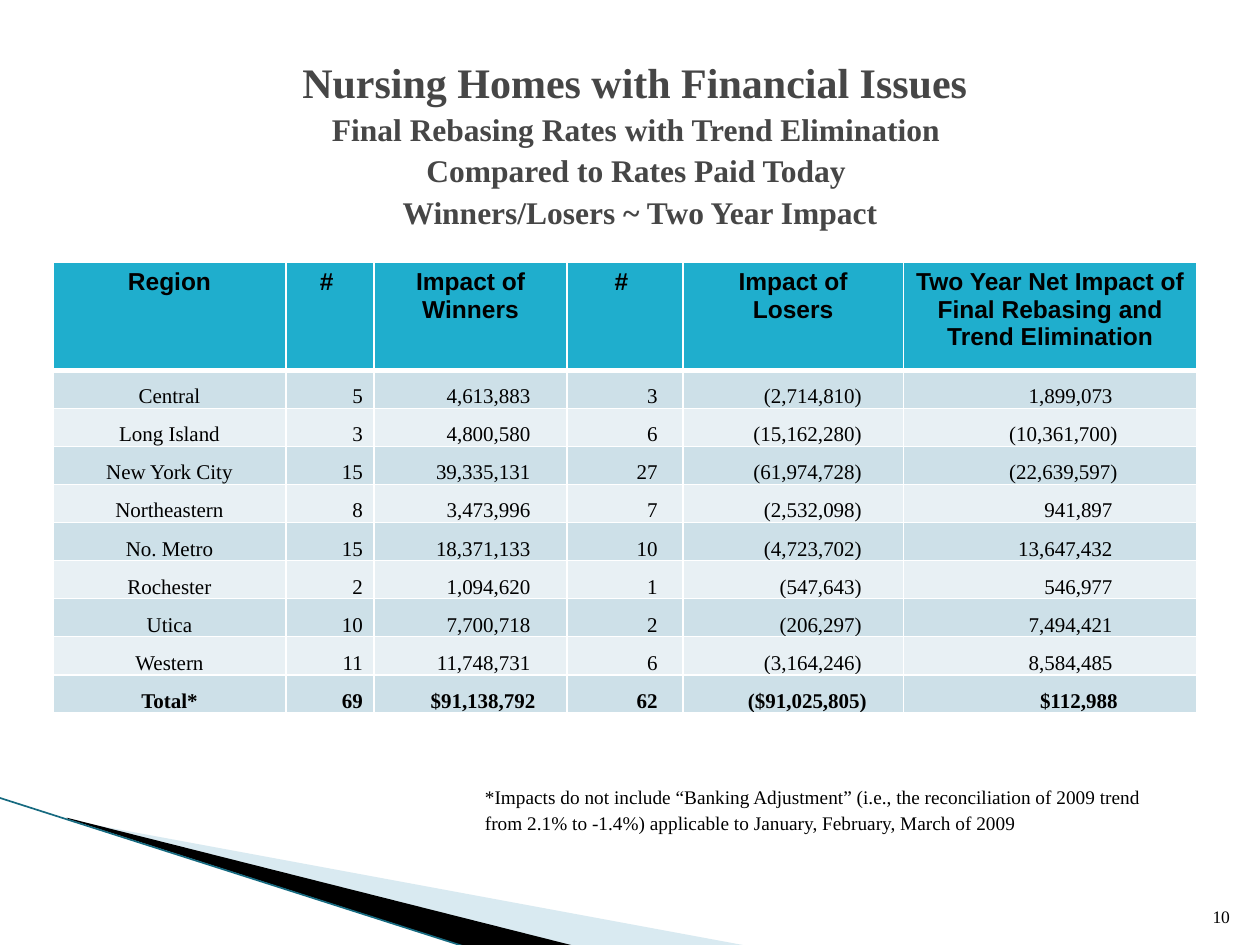
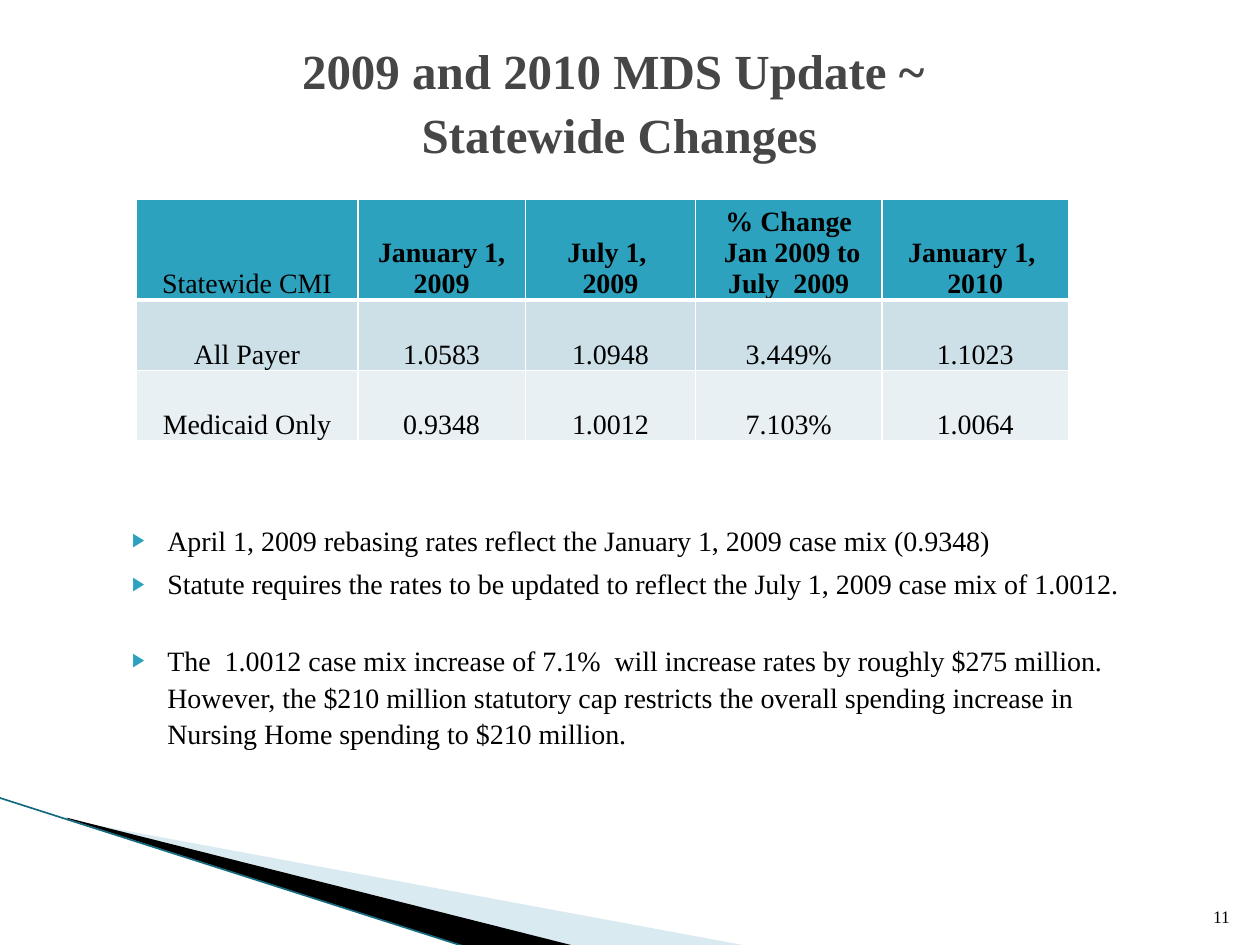
from lxml import etree
from pptx import Presentation
from pptx.dml.color import RGBColor
from pptx.enum.shapes import MSO_CONNECTOR
from pptx.enum.text import MSO_ANCHOR, PP_ALIGN
from pptx.oxml.ns import qn
from pptx.util import Inches, Pt

BLACK = RGBColor(0x00, 0x00, 0x00)
WHITE = RGBColor(0xFF, 0xFF, 0xFF)
TITLE_GREY = RGBColor(0x46, 0x46, 0x46)
TEAL = RGBColor(0x2D, 0xA2, 0xBF)
BRIGHT_TEAL = RGBColor(0x1F, 0xAE, 0xCD)
DARK_TEAL = RGBColor(0x16, 0x6A, 0x80)
PALE_BLUE = RGBColor(0xA0, 0xCB, 0xDC)
BANDS = (RGBColor(0xCD, 0xE0, 0xE8), RGBColor(0xE8, 0xF0, 0xF4))

SERIF = "Times New Roman"
SANS = "Arial"
LINE_SPACING = 1.09


class Deck:
    """Holds the shared style and the slide being built."""

    def __init__(self):
        self.prs = Presentation()
        self.prs.slide_width, self.prs.slide_height = Inches(10), Inches(7.5)
        self.s = None

    def new_slide(self, number):
        self.s = self.prs.slides.add_slide(self.prs.slide_layouts[6])
        # Corner wedges and the line beside them
        self.wedge([(0.55, 6.51), (5.95, 7.51), (4.56, 7.51), (0.55, 6.5)], PALE_BLUE, 40)
        self.wedge([(0.53, 6.49), (4.57, 7.51), (3.72, 7.52), (0.54, 6.5)], BLACK)
        self.line((-0.01, 6.33), (3.71, 7.52), DARK_TEAL, 0.95)
        # Slide number
        self.text((9.46, 7.01, 0.4, 0.4), [(str(number), 10)],
                  align=PP_ALIGN.RIGHT, anchor=MSO_ANCHOR.BOTTOM)

    def wedge(self, points, color, alpha=None):
        points = [(Inches(x), Inches(y)) for x, y in points]
        builder = self.s.shapes.build_freeform(*points[0], scale=1.0)
        builder.add_line_segments(points[1:], close=True)
        sp = builder.convert_to_shape()
        sp.shadow.inherit = False
        sp.fill.solid()
        sp.fill.fore_color.rgb = color
        sp.line.fill.background()
        if alpha is not None:
            clr = sp.fill._xPr.find(qn("a:solidFill"))[0]
            etree.SubElement(clr, qn("a:alpha"), val=str(alpha * 1000))

    def line(self, start, end, color, width):
        ends = [Inches(v) for v in start + end]
        cxn = self.s.shapes.add_connector(MSO_CONNECTOR.STRAIGHT, *ends)
        cxn.line.color.rgb = color
        cxn.line.width = Pt(width)
        etree.SubElement(cxn._element.spPr, qn("a:effectLst"))

    def run(self, p, text, size, font=SERIF, color=BLACK, bold=False):
        r = p.add_run()
        r.text = text
        r.font.name, r.font.size, r.font.bold = font, Pt(size), bold
        r.font.color.rgb = color

    def text(self, box, lines, align=PP_ALIGN.LEFT, anchor=MSO_ANCHOR.TOP, **style):
        sp = self.s.shapes.add_textbox(*[Inches(v) for v in box])
        tf = sp.text_frame
        tf.word_wrap = True
        tf.vertical_anchor = anchor
        for i, (text, size) in enumerate(lines):
            p = tf.add_paragraph() if i else tf.paragraphs[0]
            p.alignment = align
            p.line_spacing = LINE_SPACING
            self.run(p, text, size, **style)
        return tf

    def title(self, box, lines):
        self.text(box, lines, PP_ALIGN.CENTER, MSO_ANCHOR.MIDDLE,
                  color=TITLE_GREY, bold=True)

    def bullets(self, box, items, size):
        """Each item is (text, space before in points)."""
        tf = self.text(box, [(text, size) for text, _ in items])
        for p, (_, before) in zip(tf.paragraphs, items):
            p.space_before = Pt(before)
            pPr = p._p.get_or_add_pPr()
            pPr.set("marL", str(Inches(0.4)))
            pPr.set("indent", str(Inches(-0.28)))
            bu_clr = etree.SubElement(pPr, qn("a:buClr"))
            etree.SubElement(bu_clr, qn("a:srgbClr"), val=str(TEAL))
            etree.SubElement(pPr, qn("a:buSzPct"), val="68000")
            etree.SubElement(pPr, qn("a:buFont"), typeface=SANS)
            etree.SubElement(pPr, qn("a:buChar"), char="▶")

    def table(self, left, top, cols, row_heights, rows):
        width, height = Inches(sum(cols)), Inches(sum(row_heights))
        tbl = self.s.shapes.add_table(len(rows), len(cols), Inches(left),
                                      Inches(top), width, height).table
        for col, w in zip(tbl.columns, cols):
            col.width = Inches(w)
        for row, h in zip(tbl.rows, row_heights):
            row.height = Inches(h)
        return tbl

    def cell(self, tbl, row, col, text, fill, size, align=PP_ALIGN.CENTER,
             anchor=MSO_ANCHOR.BOTTOM, margins=(0, 0, 0, 0), **style):
        """Margins run left, top, right, bottom."""
        c = tbl.cell(row, col)
        c.vertical_anchor = anchor
        (c.margin_left, c.margin_top,
         c.margin_right, c.margin_bottom) = [Inches(m) for m in margins]
        # White grid, heavier under the header row
        tcPr = c._tc.get_or_add_tcPr()
        for side in "LRTB":
            heavy = (row, side) in ((0, "B"), (1, "T"))
            ln = etree.SubElement(tcPr, qn("a:ln" + side), w=str(Pt(3 if heavy else 1)))
            solid = etree.SubElement(ln, qn("a:solidFill"))
            etree.SubElement(solid, qn("a:srgbClr"), val=str(WHITE))
        c.fill.solid()
        c.fill.fore_color.rgb = fill
        for i, part in enumerate(text.split("\n")):
            p = c.text_frame.add_paragraph() if i else c.text_frame.paragraphs[0]
            p.alignment = align
            self.run(p, part, size, **style)


def region_slide(deck):
    deck.new_slide(10)
    deck.title((0.58, 0.42, 9, 1.4), [
        ("Nursing Homes with Financial Issues ", 24),
        ("Final Rebasing Rates with Trend Elimination ", 18),
        ("Compared to Rates Paid Today ", 18),
        ("Winners/Losers ~ Two Year Impact", 18),
    ])

    # Impact by region
    rows = [
        ("Region", "# ", "Impact of Winners", "# ", "Impact of Losers",
         "Two Year Net Impact of Final Rebasing and Trend Elimination"),
        ("Central", "5", "4,613,883", "3", "(2,714,810)", "1,899,073"),
        ("Long Island", "3", "4,800,580", "6", "(15,162,280)", "(10,361,700)"),
        ("New York City", "15", "39,335,131", "27", "(61,974,728)", "(22,639,597)"),
        ("Northeastern", "8", "3,473,996", "7", "(2,532,098)", "941,897"),
        ("No. Metro", "15", "18,371,133", "10", "(4,723,702)", "13,647,432"),
        ("Rochester", "2", "1,094,620", "1", "(547,643)", "546,977"),
        ("Utica", "10", "7,700,718", "2", "(206,297)", "7,494,421"),
        ("Western", "11", "11,748,731", "6", "(3,164,246)", "8,584,485"),
        ("Total*", "69", "$91,138,792", "62", "($91,025,805)", "$112,988"),
    ]
    right_margins = (0.01, 0.09, 0.29, 0.2, 0.37, 0.67)
    header_height, table_height = 0.86, 3.58
    body_height = (table_height - header_height) / (len(rows) - 1)
    tbl = deck.table(0.42, 2.08, (1.85, 0.7, 1.53, 0.92, 1.75, 2.33),
                     [header_height] + [body_height] * (len(rows) - 1), rows)
    for j, heading in enumerate(rows[0]):
        deck.cell(tbl, 0, j, heading, BRIGHT_TEAL, 14, anchor=MSO_ANCHOR.TOP,
                  margins=(0.1, 0.05, 0.1, 0.05), font=SANS, bold=True)
    for i, row in enumerate(rows[1:], 1):
        for j, value in enumerate(row):
            # Brackets and bold totals hang a little to the right
            hang = 0.04 * (("(" in value) + ("$" in value))
            deck.cell(tbl, i, j, value, BANDS[(i - 1) % 2], 12,
                      align=PP_ALIGN.RIGHT if j else PP_ALIGN.CENTER,
                      margins=(0.01, 0.01, right_margins[j] - hang, 0),
                      bold=i == len(rows) - 1)

    # Footnote
    deck.text((3.75, 6.17, 5.58, 0.47), [(
        "*Impacts do not include “Banking Adjustment” (i.e., the reconciliation of 2009 "
        "trend from 2.1% to -1.4%) applicable to January, February, March of 2009", 11)])


def case_mix_slide(deck):
    deck.new_slide(11)
    deck.title((0.25, 0.25, 9.33, 1.08),
               [("2009 and 2010 MDS Update ~ ", 28), ("Statewide Changes", 28)])

    # Rates and cap
    deck.bullets((0.83, 4.08, 8.17, 2), [
        ("April 1, 2009 rebasing rates reflect the January 1, 2009 case mix (0.9348)", 0),
        ("Statute requires the rates to be updated to reflect the July 1, 2009 "
         "case mix of 1.0012.", 4),
        ("The  1.0012 case mix increase of 7.1%  will increase rates by roughly "
         "$275 million.  However, the $210 million statutory cap restricts the overall "
         "spending increase in Nursing Home spending to $210 million.", 23),
    ], 16)

    # Statewide case mix index
    rows = [
        ("Statewide CMI", "January 1, 2009", "July 1, \n2009",
         "% Change\n Jan 2009 to July  2009", "January 1, \n2010"),
        ("All Payer", "1.0583", "1.0948", "3.449%", "1.1023"),
        ("Medicaid Only", "0.9348", "1.0012", "7.103%", "1.0064"),
    ]
    tbl = deck.table(1.08, 1.58, (1.76, 1.33, 1.35, 1.48, 1.48), (0.74, 0.56, 0.56), rows)
    for i, row in enumerate(rows):
        for j, value in enumerate(row):
            deck.cell(tbl, i, j, value, BANDS[(i - 1) % 2] if i else TEAL, 16,
                      bold=i == 0 and j > 0)


def main():
    deck = Deck()
    region_slide(deck)
    case_mix_slide(deck)
    deck.prs.save("out.pptx")


if __name__ == "__main__":
    main()
